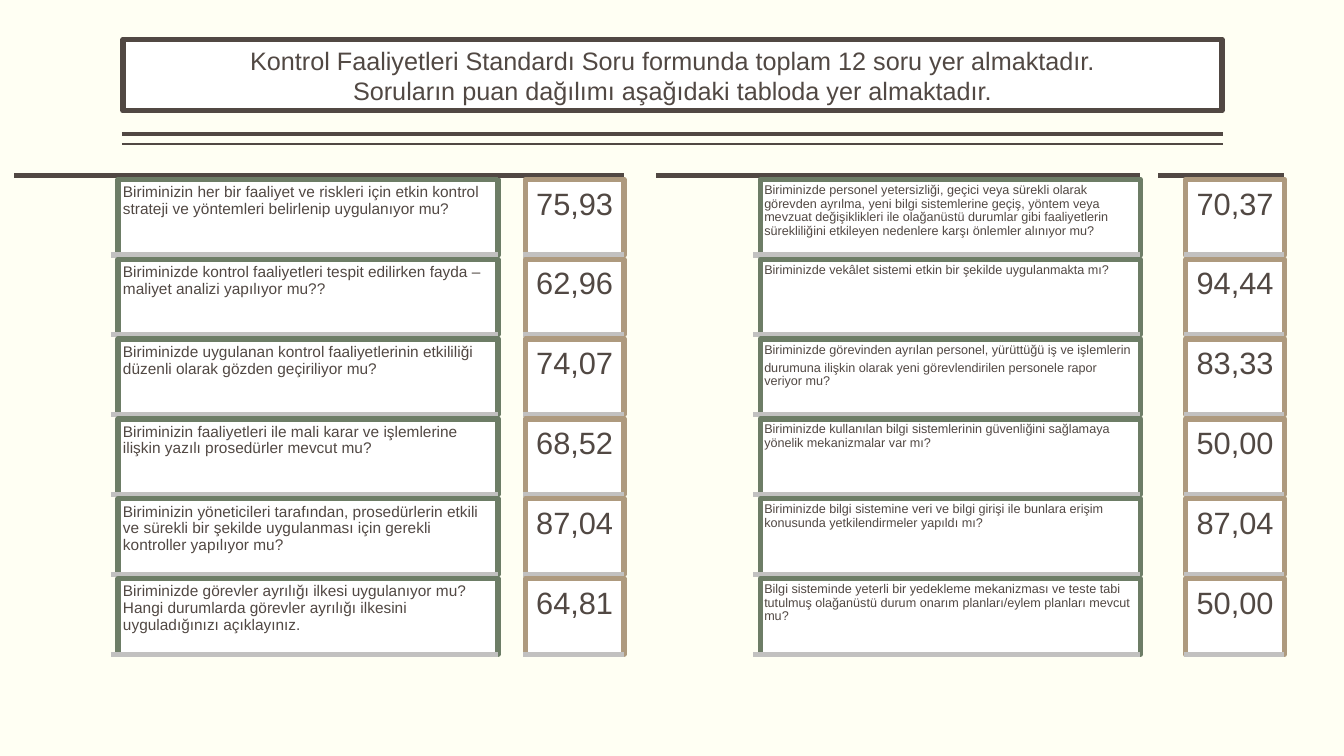
from lxml import etree
from pptx import Presentation
from pptx.dml.color import RGBColor
from pptx.enum.shapes import MSO_CONNECTOR, MSO_SHAPE
from pptx.enum.text import MSO_ANCHOR, MSO_AUTO_SIZE, PP_ALIGN
from pptx.oxml.ns import qn
from pptx.util import Inches, Pt

CREAM = RGBColor(0xFF, 0xFF, 0xF3)
WHITE = RGBColor(0xFF, 0xFF, 0xFF)
BROWN = RGBColor(0x51, 0x48, 0x43)
GREEN = RGBColor(0x6D, 0x7D, 0x66)
TAN = RGBColor(0xAE, 0x9A, 0x7E)
GRAY = RGBColor(0xC2, 0xC1, 0xC0)

THICK = 3.78
FIRST_TOP, LAST_TOP, BOX_HEIGHT = 1.78, 5.74, 0.75
ROW_STEP = (LAST_TOP - FIRST_TOP) / 5
HEADER_LINE_TOP = 1.74

LEFT_QUESTIONS = [
    "Biriminizin her bir faaliyet ve riskleri için etkin kontrol strateji ve yöntemleri belirlenip uygulanıyor mu?",
    "Biriminizde kontrol faaliyetleri tespit edilirken fayda – maliyet analizi yapılıyor mu??",
    "Biriminizde uygulanan kontrol faaliyetlerinin etkililiği düzenli olarak gözden geçiriliyor mu?",
    "Biriminizin faaliyetleri ile mali karar ve işlemlerine ilişkin yazılı prosedürler mevcut mu?",
    "Biriminizin yöneticileri tarafından, prosedürlerin etkili ve sürekli bir şekilde uygulanması için gerekli "
    "kontroller yapılıyor mu?",
    "Biriminizde görevler ayrılığı ilkesi uygulanıyor mu? Hangi durumlarda görevler ayrılığı ilkesini "
    "uyguladığınızı açıklayınız.",
]
RIGHT_QUESTIONS = [
    "Biriminizde personel yetersizliği, geçici veya sürekli olarak görevden ayrılma, yeni bilgi sistemlerine geçiş, "
    "yöntem veya mevzuat değişiklikleri ile olağanüstü durumlar gibi faaliyetlerin sürekliliğini etkileyen "
    "nedenlere karşı önlemler alınıyor mu?",
    "Biriminizde vekâlet sistemi etkin bir şekilde uygulanmakta mı?",
    "Biriminizde görevinden ayrılan personel, yürüttüğü iş ve işlemlerin\n"
    "durumuna ilişkin olarak yeni görevlendirilen personele rapor veriyor mu?",
    "Biriminizde kullanılan bilgi sistemlerinin güvenliğini sağlamaya yönelik mekanizmalar var mı?",
    "Biriminizde bilgi sistemine veri ve bilgi girişi ile bunlara erişim konusunda yetkilendirmeler yapıldı mı?",
    "Bilgi sisteminde yeterli bir yedekleme mekanizması ve teste tabi tutulmuş olağanüstü durum onarım "
    "planları/eylem planları mevcut mu?",
]
LEFT_SCORES = ["75,93", "62,96", "74,07", "68,52", "87,04", "64,81"]
RIGHT_SCORES = ["70,37", "94,44", "83,33", "50,00", "87,04", "50,00"]

# Header start, row line start, box left, box width, border, inset, size, alignment, texts
COLUMNS = [
    (0.14, 1.10, 1.17, 3.77, GREEN, 0.05, 11, PP_ALIGN.LEFT, LEFT_QUESTIONS),
    (4.94, 5.19, 5.21, 0.98, TAN, 0.09, 22, PP_ALIGN.CENTER, LEFT_SCORES),
    (6.51, 7.47, 7.54, 3.77, GREEN, 0.04, 9, PP_ALIGN.LEFT, RIGHT_QUESTIONS),
    (11.49, 11.74, 11.76, 0.98, TAN, 0.09, 22, PP_ALIGN.CENTER, RIGHT_SCORES),
]

presentation = Presentation()
presentation.slide_width = Inches(13.33)
presentation.slide_height = Inches(7.5)
slide = presentation.slides.add_slide(presentation.slide_layouts[5])
slide.background.fill.solid()
slide.background.fill.fore_color.rgb = CREAM


def add_rule(start, end, top, color, width):
    rule = slide.shapes.add_connector(
        MSO_CONNECTOR.STRAIGHT, Inches(start), Inches(top), Inches(end), Inches(top))
    rule.line.color.rgb = color
    rule.line.width = Pt(width)
    etree.SubElement(rule._element.spPr, qn("a:effectLst"))


def format_box(shape, border, text, size, alignment, line_spacing, space_after):
    shape.fill.solid()
    shape.fill.fore_color.rgb = WHITE
    shape.line.color.rgb = border
    shape.line.width = Pt(THICK)
    frame = shape.text_frame
    frame.word_wrap = True
    for index, line in enumerate(text.split("\n")):
        paragraph = frame.add_paragraph() if index else frame.paragraphs[0]
        paragraph.alignment = alignment
        paragraph.line_spacing = line_spacing
        paragraph.space_after = Pt(space_after)
        run = paragraph.add_run()
        run.text = line
        run.font.size = Pt(size)
        run.font.name = "Arial"
        run.font.color.rgb = BROWN


# Title and the double rule below it
title = slide.shapes.title
title.left, title.top = Inches(1.22), Inches(0.39)
title.width, title.height = Inches(10.9), Inches(0.71)
format_box(
    title, BROWN,
    "Kontrol Faaliyetleri Standardı Soru formunda toplam 12 soru yer almaktadır.\n"
    "Soruların puan dağılımı aşağıdaki tabloda yer almaktadır.",
    18, PP_ALIGN.CENTER, 1.0, 0)
title.text_frame.auto_size = MSO_AUTO_SIZE.NONE
title.text_frame.vertical_anchor = MSO_ANCHOR.MIDDLE
add_rule(1.21, 12.13, 1.33, BROWN, 3)
add_rule(1.21, 12.13, 1.43, BROWN, 1)

# Question and score columns
for header_start, row_start, left, width, border, inset, size, alignment, texts in COLUMNS:
    right = left + width
    add_rule(header_start, right, HEADER_LINE_TOP, BROWN, THICK)
    for row, text in enumerate(texts):
        top = FIRST_TOP + row * ROW_STEP
        box = slide.shapes.add_shape(
            MSO_SHAPE.RECTANGLE, Inches(left), Inches(top), Inches(width), Inches(BOX_HEIGHT))
        box.shadow.inherit = False
        format_box(box, border, text, size, alignment, 0.9, size * 0.35)
        frame = box.text_frame
        frame.vertical_anchor = MSO_ANCHOR.TOP
        frame.margin_left = frame.margin_right = Inches(inset)
        frame.margin_top = frame.margin_bottom = Inches(inset)
        add_rule(row_start, right, top + BOX_HEIGHT, GRAY, THICK)

presentation.save("out.pptx")
